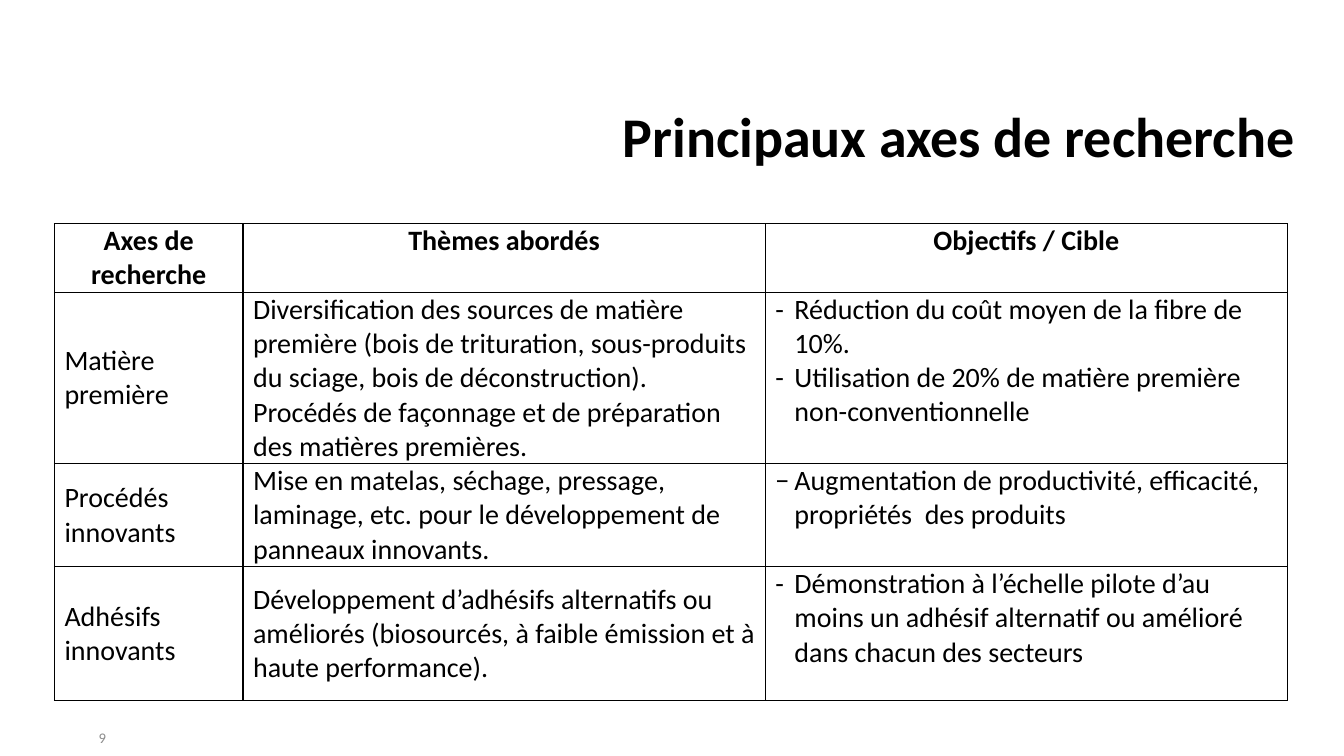
from lxml import etree
from pptx import Presentation
from pptx import util as u
from pptx.dml.color import RGBColor
from pptx.enum import text
from pptx.oxml.ns import qn

WIDE, HIGH = u.Inches(13.33), u.Inches(7.5)
FONT, BLACK, GREY = "Calibri", "000000", "8C8C8C"
MID, TOP = text.MSO_ANCHOR.MIDDLE, text.MSO_ANCHOR.TOP
LEFT, RIGHT, CENTER = text.PP_ALIGN.LEFT, text.PP_ALIGN.RIGHT, text.PP_ALIGN.CENTER

# Shares of the slide, in percent
COLS = [14.03, 38.86, 38.86]
ROWS = [8.93, 22.27, 13.33, 17.73]

HEADS = ["Axes de recherche", "Thèmes abordés", "Objectifs / Cible"]
# Axis, lines of its themes, bullet sign, goals
AXES = [
    ("Matière première",
     ["Diversification des sources de matière première (bois de trituration, "
      "sous-produits du sciage, bois de déconstruction).",
      "Procédés de façonnage et de préparation des matières premières."],
     "-", ["Réduction du coût moyen de la fibre de 10%.",
           "Utilisation de 20% de matière première non-conventionnelle"]),
    ("Procédés innovants",
     ["Mise en matelas, séchage, pressage, laminage, etc. pour le "
      "développement de panneaux innovants."],
     "−", ["Augmentation de productivité, efficacité, propriétés  des produits"]),
    ("Adhésifs innovants",
     ["Développement d’adhésifs alternatifs ou améliorés (biosourcés, "
      "à faible émission et à haute performance)."],
     "-", ["Démonstration à l’échelle pilote d’au moins un adhésif alternatif "
           "ou amélioré dans chacun des secteurs"]),
]


def across(share):
    return round(WIDE * share / 100)


def down(share):
    return round(HIGH * share / 100)


def color(code):
    return RGBColor.from_string(code)


def write(frame, lines, size=20, bold=False, ink=BLACK, align=LEFT, sign=None):
    """Fill a text frame with one paragraph per line, bulleted if a sign is given."""
    frame.word_wrap = True
    for i, line in enumerate(lines):
        para = frame.paragraphs[0] if i == 0 else frame.add_paragraph()
        para.alignment = align
        if sign:
            bullet(para, sign)
        run = para.add_run()
        run.text = line
        font = run.font
        font.name, font.size, font.bold = FONT, u.Pt(size), bold
        font.color.rgb = color(ink)


def bullet(para, sign):
    props = para._p.get_or_add_pPr()
    hang = u.Inches(0.19)
    props.set("marL", str(hang))
    props.set("indent", str(-hang))
    etree.SubElement(props, qn("a:buFont"), typeface=FONT)
    etree.SubElement(props, qn("a:buChar"), char=sign)


def label(slide, place, line, align=RIGHT, **style):
    left, top, width, height = place
    box = slide.shapes.add_textbox(across(left), down(top), across(width), down(height))
    box.text_frame.vertical_anchor = MID
    write(box.text_frame, [line], align=align, **style)
    return box.text_frame.paragraphs[0]


def border(cell):
    props = cell._tc.get_or_add_tcPr()
    for side in ("a:lnL", "a:lnR", "a:lnT", "a:lnB"):
        line = etree.SubElement(props, qn(side), w=str(u.Pt(1)))
        fill = etree.SubElement(line, qn("a:solidFill"))
        etree.SubElement(fill, qn("a:srgbClr"), val=BLACK)


def fill_cell(cell, lines, anchor=MID, **style):
    border(cell)
    cell.fill.background()
    cell.margin_left = cell.margin_right = u.Inches(0.1)
    cell.margin_top = cell.margin_bottom = 0
    cell.vertical_anchor = anchor
    write(cell.text_frame, lines, **style)


def add_grid(slide, left, top):
    frame = slide.shapes.add_table(len(ROWS), len(COLS), across(left), down(top),
                                   across(sum(COLS)), down(sum(ROWS)))
    table = frame.table
    table.first_row = table.horz_banding = False
    for col, share in zip(table.columns, COLS):
        col.width = across(share)
    for row, share in zip(table.rows, ROWS):
        row.height = down(share)
    return table


def main():
    deck = Presentation()
    deck.slide_width, deck.slide_height = WIDE, HIGH
    slide = deck.slides.add_slide(deck.slide_layouts[6])

    table = add_grid(slide, 4.05, 29.6)
    for c, head in enumerate(HEADS):
        fill_cell(table.cell(0, c), [head], anchor=TOP, bold=True, align=CENTER)
    for r, (axis, themes, sign, goals) in enumerate(AXES, 1):
        fill_cell(table.cell(r, 0), [axis])
        fill_cell(table.cell(r, 1), themes)
        fill_cell(table.cell(r, 2), goals, anchor=TOP, sign=sign)

    label(slide, (0.9, 95.2, 7.73, 4.8), "9", size=10.5, ink=GREY)
    title = label(slide, (10.8, 12.27, 86.27, 12.27), "Principaux axes de recherche",
                  size=40, bold=True)
    title.line_spacing = 0.9
    deck.save("out.pptx")


if __name__ == "__main__":
    main()
